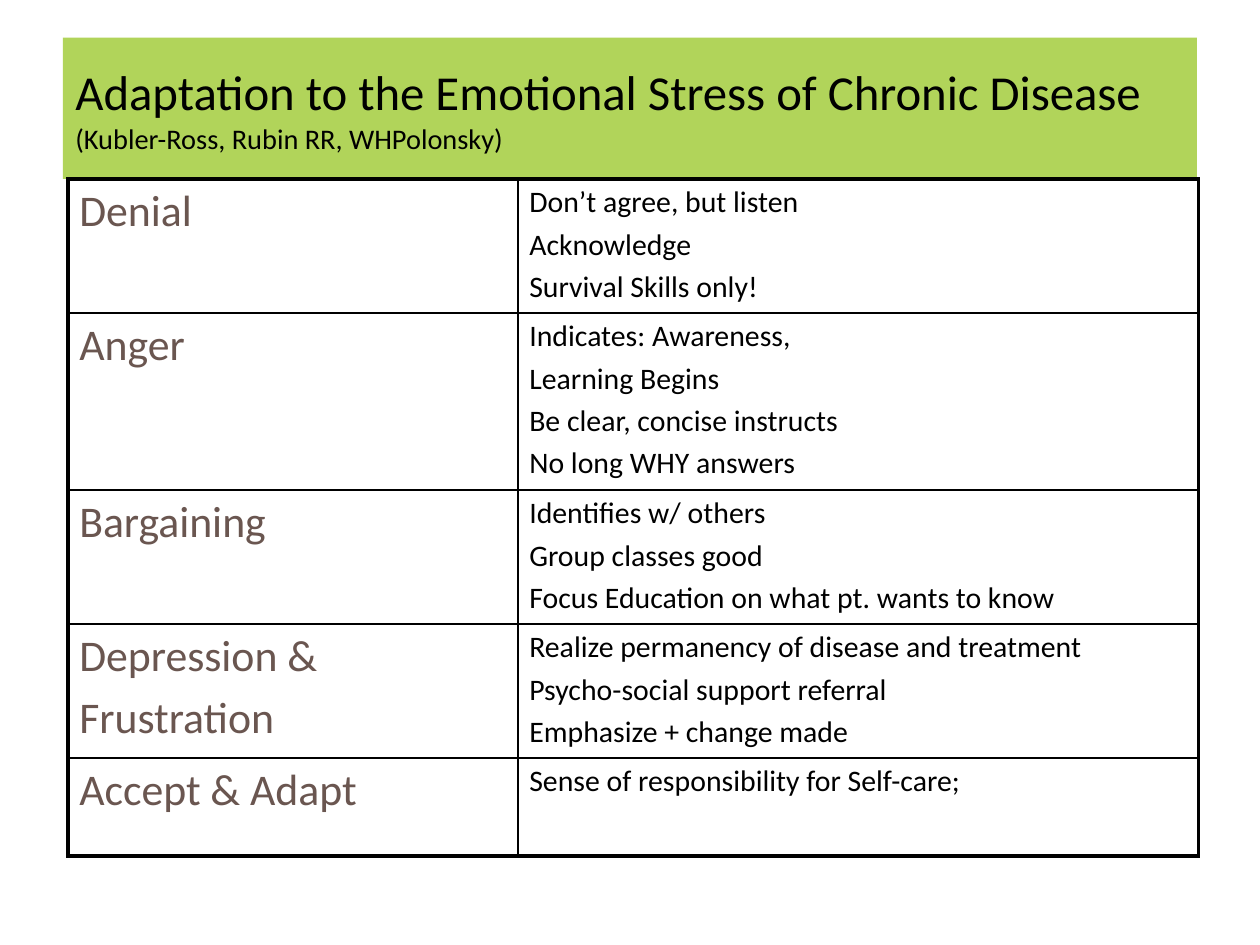
from pptx import Presentation
from pptx.dml.color import RGBColor
from pptx.enum.shapes import MSO_SHAPE
from pptx.enum.text import MSO_ANCHOR, PP_ALIGN
from pptx.oxml.ns import qn
from pptx.util import Cm, Pt
from lxml.etree import SubElement

COLORS = {"banner": "B1D45A", "text": "000000", "stage": "6A5650", "border": "000000"}
FONT = "Calibri"
THIN, THICK = Pt(1), Pt(2.25)
LEFT, TABLE_TOP = 1.27, 3.61
COL_WIDTHS = (9.07, 13.72)
STAGES = [
    (2.7, ["Denial"],
     ["Don’t agree, but listen", "Acknowledge", "Survival Skills only!"]),
    (3.57, ["Anger"],
     ["Indicates: Awareness,", "Learning Begins", "Be clear, concise instructs",
      "No long WHY answers"]),
    (2.7, ["Bargaining"],
     ["Identifies w/ others", "Group classes good",
      "Focus Education on what pt. wants to know"]),
    (2.7, ["Depression &", "Frustration"],
     ["Realize permanency of disease and treatment", "Psycho-social support referral",
      "Emphasize + change made"]),
    (1.98, ["Accept & Adapt"], ["Sense of responsibility for Self-care;"]),
]


def rgb(name):
    return RGBColor.from_string(COLORS[name])


def write_lines(tf, lines, color, gap=0):
    """Fill a text frame with (text, size) lines; gap is a share of the size."""
    for i, (text, size) in enumerate(lines):
        p = tf.paragraphs[0] if i == 0 else tf.add_paragraph()
        p.text = text
        p.alignment = PP_ALIGN.LEFT
        p.font.name, p.font.size = FONT, Pt(size)
        p.font.color.rgb = rgb(color)
        if i and gap:
            p.space_before = Pt(size * gap)


def add_banner(s):
    sp = s.shapes.add_shape(MSO_SHAPE.RECTANGLE, Cm(LEFT), Cm(0.76), Cm(22.86), Cm(2.85))
    sp.shadow.inherit = False
    sp.fill.solid()
    sp.fill.fore_color.rgb = rgb("banner")
    sp.line.fill.background()
    tf = sp.text_frame
    tf.word_wrap = True
    tf.vertical_anchor = MSO_ANCHOR.MIDDLE
    write_lines(tf, [("Adaptation to the Emotional Stress of Chronic Disease", 27.9),
                     ("(Kubler-Ross, Rubin RR, WHPolonsky)", 16.2)], "text")


def set_borders(cell, widths):
    """Draw the left, right, top and bottom borders, in that order."""
    tc_pr = cell._tc.get_or_add_tcPr()
    for side, width in zip("LRTB", widths):
        ln = SubElement(tc_pr, qn(f"a:ln{side}"), w=str(width))
        fill = SubElement(ln, qn("a:solidFill"))
        SubElement(fill, qn("a:srgbClr"), val=COLORS["border"])


def add_stage_table(s):
    last = len(STAGES) - 1
    table = s.shapes.add_table(
        len(STAGES), 2, Cm(LEFT + 0.1), Cm(TABLE_TOP), Cm(sum(COL_WIDTHS)),
        Cm(sum(height for height, *_ in STAGES))).table
    table.first_row = table.horz_banding = False
    for column, width in zip(table.columns, COL_WIDTHS):
        column.width = Cm(width)
    for i, (height, stage, advice) in enumerate(STAGES):
        table.rows[i].height = Cm(height)
        for j, (lines, size, color) in enumerate([(stage, 25, "stage"), (advice, 17, "text")]):
            cell = table.cell(i, j)
            outer = (j == 0, j == 1, i == 0, i == last)
            set_borders(cell, [THICK if edge else THIN for edge in outer])
            cell.fill.background()
            cell.margin_left = cell.margin_right = Cm(0.23)
            cell.margin_top = cell.margin_bottom = Cm(0.11)
            write_lines(cell.text_frame, [(text, size) for text in lines], color, 0.2)


def main():
    prs = Presentation()
    prs.slide_width, prs.slide_height = Cm(25.4), Cm(19.05)
    s = prs.slides.add_slide(prs.slide_layouts[6])
    add_banner(s)
    add_stage_table(s)
    prs.save("out.pptx")


if __name__ == "__main__":
    main()
